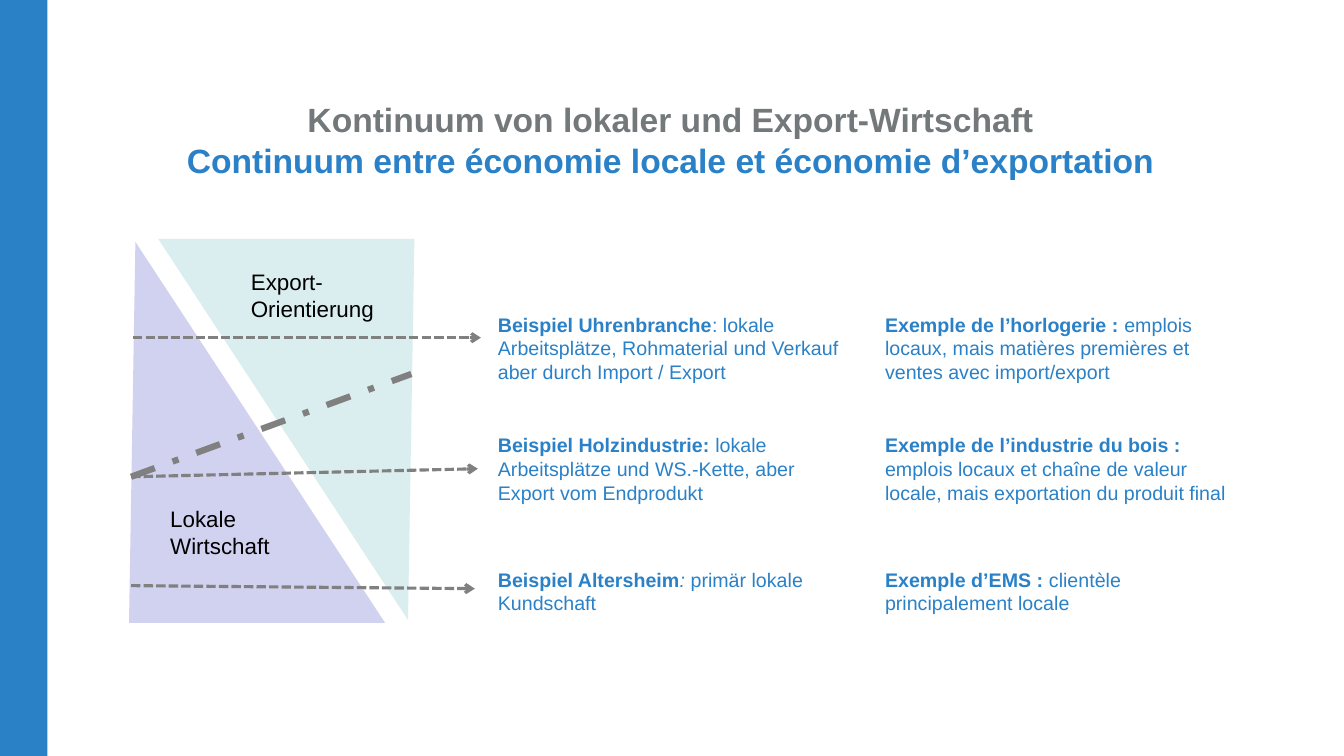
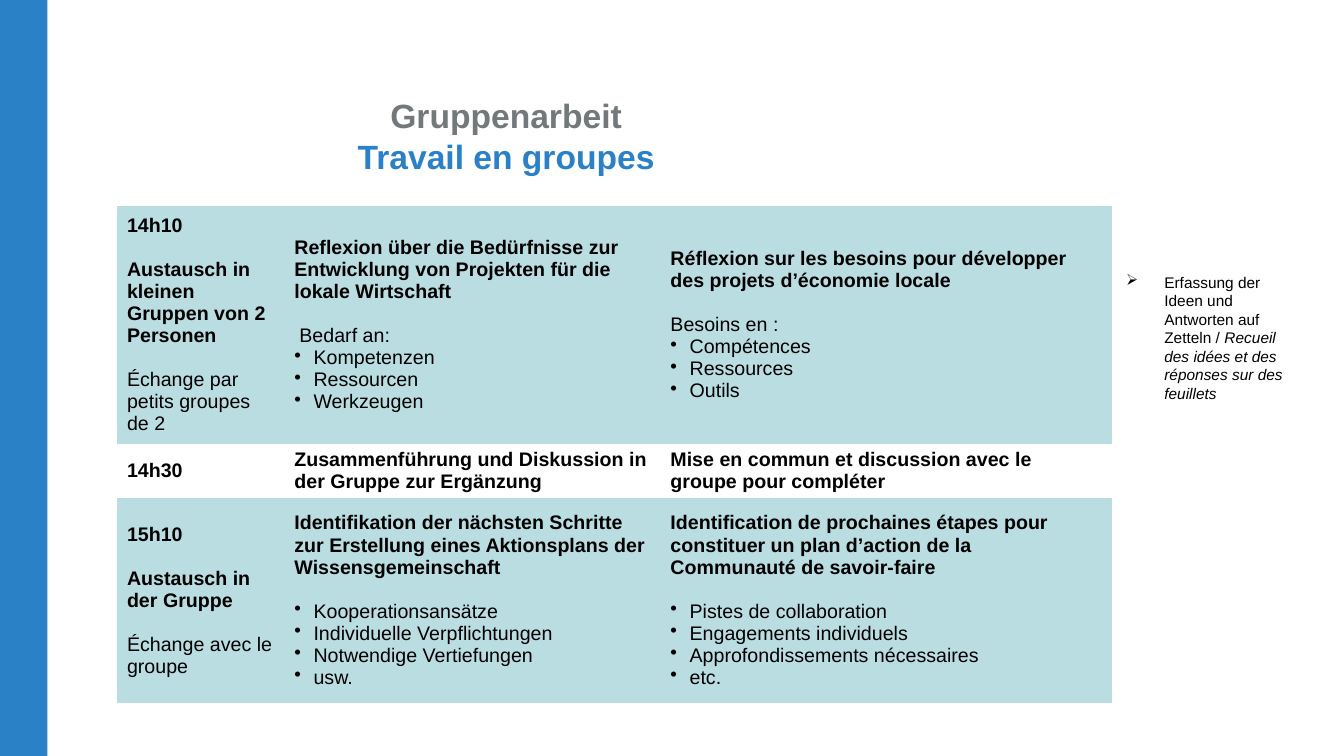
from lxml import etree
from pptx import Presentation
from pptx.dml.color import RGBColor
from pptx.enum.dml import MSO_LINE
from pptx.enum.shapes import MSO_CONNECTOR, MSO_SHAPE
from pptx.enum.text import MSO_ANCHOR, MSO_AUTO_SIZE, PP_ALIGN
from pptx.oxml.ns import qn
from pptx.util import Inches, Pt

STRAIGHT = MSO_CONNECTOR.STRAIGHT
RECTANGLE, TRIANGLE = MSO_SHAPE.RECTANGLE, MSO_SHAPE.ISOSCELES_TRIANGLE
SHORT_DASH, DASH_DOT = MSO_LINE.SQUARE_DOT, MSO_LINE.DASH_DOT
MIDDLE, CENTER = MSO_ANCHOR.MIDDLE, PP_ALIGN.CENTER
FIXED_SIZE = MSO_AUTO_SIZE.NONE

FONT = "Arial"
COLORS = {
    "band": "2A81C6", "blue": "2A81C7", "grey": "73787B", "black": "000000",
    "line": "808080", "local": "D1D1F0", "export": "DAEDEF", "row": "BADDE1",
}
TITLE_ONLY = 5
NO_TABLE_STYLE = "{2D5ABB26-0587-4C30-8999-92F81FD0307C}"

# Each example: top, German runs, French runs
EXAMPLES = [
    (3.05,
     [("Beispiel Uhrenbranche", "b"),
      (": lokale Arbeitsplätze, Rohmaterial und Verkauf aber durch Import / Export", "")],
     [("Exemple de l’horlogerie : ", "b"),
      ("emplois locaux, mais matières premières et ventes avec import/export", "")]),
    (4.25,
     [("Beispiel Holzindustrie: ", "b"),
      ("lokale Arbeitsplätze und WS.-Kette, aber Export vom Endprodukt", "")],
     [("Exemple de l’industrie du bois : ", "b"),
      ("emplois locaux et chaîne de valeur locale, mais exportation du produit final", "")]),
    (5.58,
     [("Beispiel Altersheim", "b"), (":", "i"), (" primär lokale Kundschaft", "")],
     [("Exemple d’EMS : ", "b"), ("clientèle principalement locale", "")]),
]

# Each row: height, fill, cells; each cell: (kind, text) paragraphs
AGENDA_COLUMNS = [1.66, 3.73, 4.48]
AGENDA = [
    (2.36, "row", [
        [("head", "14h10"), ("head", "Austausch in kleinen Gruppen von 2 Personen"),
         ("plain", "Échange par petits groupes de 2")],
        [("head", "Reflexion über die Bedürfnisse zur Entwicklung von Projekten "
                  "für die lokale Wirtschaft"),
         ("inset", "Bedarf an:"), ("bullet", "Kompetenzen"),
         ("bullet", "Ressourcen"), ("bullet", "Werkzeugen")],
        [("head", "Réflexion sur les besoins pour développer des projets d’économie locale"),
         ("plain", "Besoins en :"), ("bullet", "Compétences"),
         ("bullet", "Ressources"), ("bullet", "Outils")],
    ]),
    (0.54, None, [
        [("head", "14h30")],
        [("head", "Zusammenführung und Diskussion in der Gruppe zur Ergänzung")],
        [("head", "Mise en commun et discussion avec le groupe pour compléter")],
    ]),
    (2.03, "row", [
        [("head", "15h10"), ("head", "Austausch in der Gruppe"),
         ("plain", "Échange avec le groupe")],
        [("head", "Identifikation der nächsten Schritte zur Erstellung eines "
                  "Aktionsplans der Wissensgemeinschaft"),
         ("bullet", "Kooperationsansätze"), ("bullet", "Individuelle Verpflichtungen"),
         ("bullet", "Notwendige Vertiefungen"), ("bullet", "usw.")],
        [("head", "Identification de prochaines étapes pour constituer un plan "
                  "d’action de la Communauté de savoir-faire"),
         ("bullet", "Pistes de collaboration"), ("bullet", "Engagements individuels"),
         ("bullet", "Approfondissements nécessaires"), ("bullet", "etc.")],
    ]),
]


def rgb(name):
    return RGBColor.from_string(COLORS[name])


def inches(*lengths):
    return [Inches(length) for length in lengths]


def add_run(para, text, size, color, style=""):
    """Add one run; style may hold b (bold) and i (italic)."""
    run = para.add_run()
    run.text = text
    run.font.name, run.font.size = FONT, Pt(size)
    run.font.bold, run.font.italic = "b" in style, "i" in style
    run.font.color.rgb = rgb(color)


def set_indent(para, margin, hanging=0, bullet=None):
    properties = para._p.get_or_add_pPr()
    properties.set("marL", str(Inches(margin)))
    properties.set("indent", str(Inches(-hanging)))
    if bullet:
        etree.SubElement(properties, qn("a:buChar")).set("char", bullet)


def add_text(slide, box, runs, size, color):
    """Add a wrapped one-paragraph text box and return its paragraph."""
    frame = slide.shapes.add_textbox(*inches(*box)).text_frame
    frame.word_wrap = True
    para = frame.paragraphs[0]
    for text, style in runs:
        add_run(para, text, size, color, style)
    return para


def add_filled(shapes, preset, box, color):
    shape = shapes.add_shape(preset, *inches(*box))
    shape.shadow.inherit = False
    shape.fill.solid()
    shape.fill.fore_color.rgb = rgb(color)
    shape.line.fill.background()
    return shape


def add_line(slide, start, end, width, dash, arrow=False):
    line = slide.shapes.add_connector(STRAIGHT, *inches(*start, *end))
    line.line.color.rgb = rgb("line")
    line.line.width = Pt(width)
    line.line.dash_style = dash
    if arrow:
        outline = line.line._get_or_add_ln()
        etree.SubElement(outline, qn("a:tailEnd")).set("type", "arrow")
    etree.SubElement(line._element.spPr, qn("a:effectLst"))


def add_master_band(deck, slide):
    """Draw the side band and move it to the master, behind everything."""
    band = add_filled(slide.shapes, RECTANGLE, (0, 0, 0.47, 7.5), "band")
    deck.slide_master.shapes._spTree.insert(2, band._element)


def set_title(slide, box, german, french):
    title = slide.shapes.title
    title.left, title.top, title.width, title.height = inches(*box)
    frame = title.text_frame
    frame.word_wrap, frame.auto_size = True, FIXED_SIZE
    frame.vertical_anchor = MIDDLE
    para = frame.paragraphs[0]
    para.alignment = CENTER
    add_run(para, german, 24, "grey", "b")
    para.add_line_break()
    add_run(para, french, 24, "blue", "b")


def add_continuum(slide, left, top):
    """Two facing triangles with their labels and the lines across them."""
    width, height, shift = 2.54, 3.78, 0.29
    group = slide.shapes.add_group_shape()
    local = add_filled(group.shapes, TRIANGLE, (left, top + 0.03, width, height), "local")
    export = add_filled(group.shapes, TRIANGLE, (left + shift, top, width, height), "export")
    export.rotation = 180
    for triangle in (local, export):
        triangle.adjustments[0] = 0.025

    add_text(slide, (left + 1.11, top + 0.24, 1.82, 0.64),
             [("Export-Orientierung", "")], 16, "black")
    add_text(slide, (left + 0.31, top + 2.59, 1.57, 0.64),
             [("Lokale Wirtschaft", "")], 16, "black")

    arrows = [((0.04, 0.98), (3.49, 0.98)),
              ((0.02, 2.36), (3.46, 2.28)),
              ((0.02, 3.44), (3.43, 3.47))]
    for (x1, y1), (x2, y2) in arrows:
        add_line(slide, (left + x1, top + y1), (left + x2, top + y2),
                 2.25, SHORT_DASH, arrow=True)
    add_line(slide, (left + 0.02, top + 2.36), (left + 2.8, top + 1.34), 4.5, DASH_DOT)


def add_examples(slide, left, column_step):
    for top, *languages in EXAMPLES:
        for column, runs in enumerate(languages):
            box = (left + column * column_step, top, 3.64, 0.81)
            add_text(slide, box, runs, 14, "blue")


def fill_cell(cell, paragraphs, fill):
    """Write the paragraphs, leaving one line of space after each head."""
    cell.vertical_anchor = MIDDLE
    if fill:
        cell.fill.solid()
        cell.fill.fore_color.rgb = rgb(fill)
    else:
        cell.fill.background()
    frame = cell.text_frame
    previous = None
    for kind, text in paragraphs:
        para = frame.add_paragraph() if previous else frame.paragraphs[0]
        if previous == "head":
            para.space_before = Pt(15.7)
        if kind == "bullet":
            set_indent(para, 0.19, 0.19, "•")
        elif kind == "inset":
            set_indent(para, 0.05)
        add_run(para, text, 14, "black", "b" if kind == "head" else "")
        previous = kind


def add_agenda(slide, left, top):
    heights = [height for height, _, _ in AGENDA]
    table = slide.shapes.add_table(
        len(AGENDA), len(AGENDA_COLUMNS),
        *inches(left, top, sum(AGENDA_COLUMNS), sum(heights))).table
    table.first_row = table.horz_banding = False
    table._tbl.tblPr.find(qn("a:tableStyleId")).text = NO_TABLE_STYLE
    for column, width in zip(table.columns, AGENDA_COLUMNS):
        column.width = Inches(width)
    for row, (height, fill, cells) in zip(table.rows, AGENDA):
        row.height = Inches(height)
        for cell, paragraphs in zip(row.cells, cells):
            fill_cell(cell, paragraphs, fill)


def add_note(slide, box):
    para = add_text(slide, box, [
        ("Erfassung der Ideen und Antworten auf Zetteln / ", ""),
        ("Recueil des idées et des réponses sur des feuillets", "i"),
    ], 11, "black")
    para.space_after = Pt(6)
    set_indent(para, 0.38, 0.38, "➢")


def build_continuum_slide(slide):
    set_title(slide, (0.98, 1.07, 11.34, 0.63),
              "Kontinuum von lokaler und Export-Wirtschaft",
              "Continuum entre économie locale et économie d’exportation")
    add_continuum(slide, 1.28, 2.37)
    add_examples(slide, 4.84, 3.84)


def build_group_work_slide(slide):
    set_title(slide, (0.77, 1.03, 8.5, 0.63), "Gruppenarbeit", "Travail en groupes")
    add_agenda(slide, 1.16, 2.04)
    add_note(slide, (11.07, 2.66, 1.77, 1.44))


def main():
    deck = Presentation()
    deck.slide_width, deck.slide_height = inches(13.33, 7.5)
    layout = deck.slide_layouts[TITLE_ONLY]
    continuum = deck.slides.add_slide(layout)
    add_master_band(deck, continuum)
    build_continuum_slide(continuum)
    build_group_work_slide(deck.slides.add_slide(layout))
    deck.save("out.pptx")


if __name__ == "__main__":
    main()
